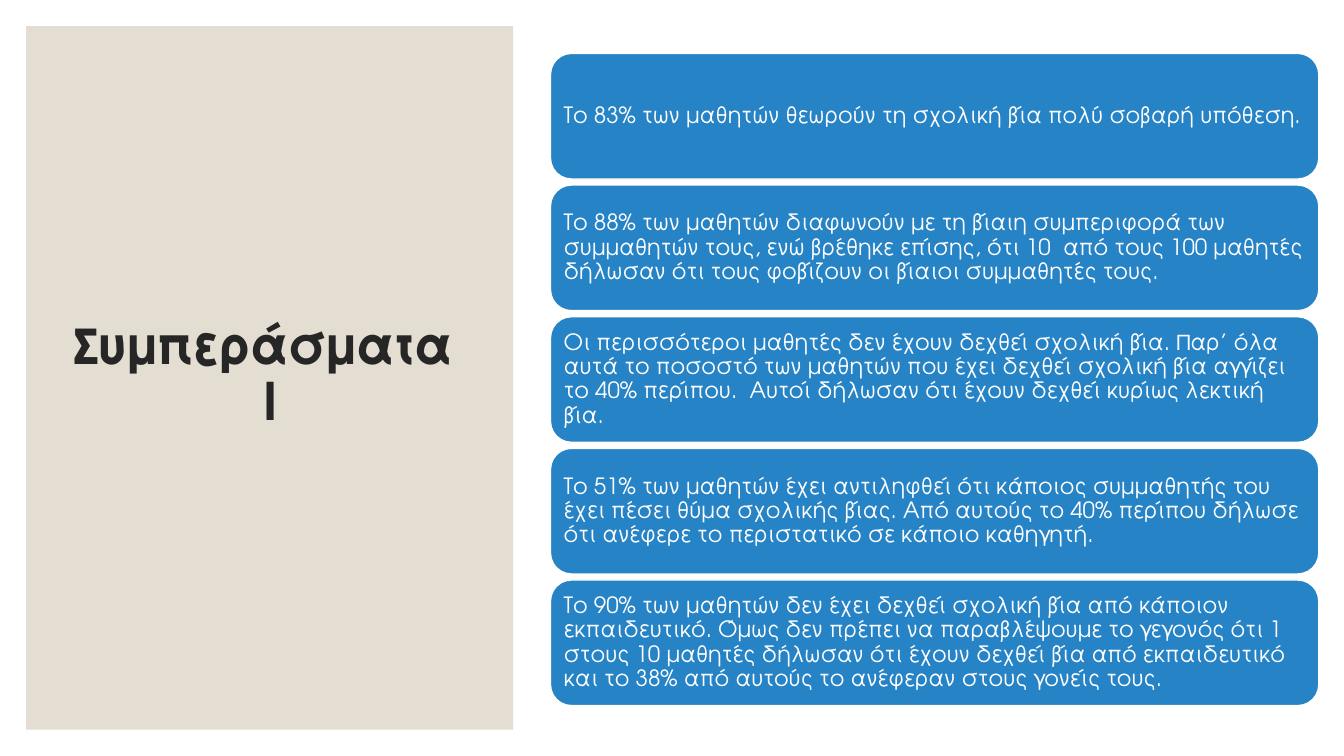
from pptx import Presentation
from pptx.dml.color import RGBColor
from pptx.enum.shapes import MSO_SHAPE
from pptx.enum.text import MSO_ANCHOR, MSO_AUTO_SIZE, PP_ALIGN
from pptx.util import Inches, Pt

WHITE = RGBColor(0xFF, 0xFF, 0xFF)
SAND = RGBColor(0xE3, 0xDE, 0xD1)
BLUE = RGBColor(0x26, 0x83, 0xC6)
INK = RGBColor(0x26, 0x26, 0x26)
FONT = "TeX Gyre Adventor"

HEADING = "Συμπεράσματα  Ι"
FINDINGS = [
    "Το 83% των μαθητών θεωρούν τη σχολική βία πολύ σοβαρή υπόθεση.",
    "Το 88% των μαθητών διαφωνούν με τη βίαιη συμπεριφορά των συμμαθητών τους, "
    "ενώ βρέθηκε επίσης, ότι 10  από τους 100 μαθητές δήλωσαν ότι τους φοβίζουν "
    "οι βίαιοι συμμαθητές τους.",
    "Οι περισσότεροι μαθητές δεν έχουν δεχθεί σχολική βία. Παρ’ όλα αυτά το "
    "ποσοστό των μαθητών που έχει δεχθεί σχολική βία αγγίζει το 40% περίπου.  "
    "Αυτοί δήλωσαν ότι έχουν δεχθεί κυρίως λεκτική βία.",
    "Το 51% των μαθητών έχει αντιληφθεί ότι κάποιος συμμαθητής του έχει πέσει "
    "θύμα σχολικής βίας. Από αυτούς το 40% περίπου δήλωσε ότι ανέφερε το "
    "περιστατικό σε κάποιο καθηγητή.",
    "Το 90% των μαθητών δεν έχει δεχθεί σχολική βία από κάποιον εκπαιδευτικό. "
    "Όμως δεν πρέπει να παραβλέψουμε το γεγονός ότι 1 στους 10 μαθητές δήλωσαν "
    "ότι έχουν δεχθεί βία από εκπαιδευτικό και το 38% από αυτούς το ανέφεραν "
    "στους γονείς τους.",
]


def write_text(frame, text, size, color, align, bold=False):
    """Write one vertically centred paragraph into a text frame."""
    frame.word_wrap = True
    frame.auto_size = MSO_AUTO_SIZE.NONE
    frame.vertical_anchor = MSO_ANCHOR.MIDDLE
    paragraph = frame.paragraphs[0]
    paragraph.alignment = align
    paragraph.line_spacing = 0.9
    run = paragraph.add_run()
    run.text = text
    run.font.name = FONT
    run.font.size = Pt(size)
    run.font.bold = bold
    run.font.color.rgb = color


def add_block(slide, kind, left, top, width, height, fill):
    """Add a flat filled shape without an outline."""
    block = slide.shapes.add_shape(
        kind, Inches(left), Inches(top), Inches(width), Inches(height))
    block.shadow.inherit = False
    block.fill.solid()
    block.fill.fore_color.rgb = fill
    block.line.fill.background()
    return block


def add_heading_panel(slide, left, top, width, height):
    """Place the sand panel with the slide title centred on it."""
    panel = add_block(slide, MSO_SHAPE.RECTANGLE, left, top, width, height, SAND)
    heading = slide.shapes.title
    heading.element.addprevious(panel.element)
    heading.left, heading.top = Inches(left + 0.37), Inches(top + 0.35)
    heading.width, heading.height = Inches(width - 0.71), Inches(height - 0.74)
    write_text(heading.text_frame, HEADING, 37, INK, PP_ALIGN.CENTER, bold=True)


def add_findings(slide, left, top, width, height, gap=0.06):
    """Stack the findings as equal rounded cards that fill the box."""
    card_height = (height - gap * (len(FINDINGS) - 1)) / len(FINDINGS)
    for index, finding in enumerate(FINDINGS):
        card_top = top + index * (card_height + gap)
        card = add_block(slide, MSO_SHAPE.ROUNDED_RECTANGLE,
                         left, card_top, width, card_height, BLUE)
        card.line.color.rgb = WHITE
        card.line.width = Pt(1)
        frame = card.text_frame
        frame.margin_left = frame.margin_right = Inches(0.07)
        frame.margin_top = frame.margin_bottom = Inches(0.07)
        write_text(frame, finding, 16, WHITE, PP_ALIGN.LEFT)


def main():
    """Build and save the conclusions slide."""
    deck = Presentation()
    deck.slide_width, deck.slide_height = Inches(13.33), Inches(7.5)
    slide = deck.slides.add_slide(deck.slide_layouts[5])
    slide.background.fill.solid()
    slide.background.fill.fore_color.rgb = WHITE
    add_heading_panel(slide, 0.26, 0.26, 4.83, 6.98)
    add_findings(slide, 5.46, 0.53, 7.62, 6.47)
    deck.save("out.pptx")


if __name__ == "__main__":
    main()
